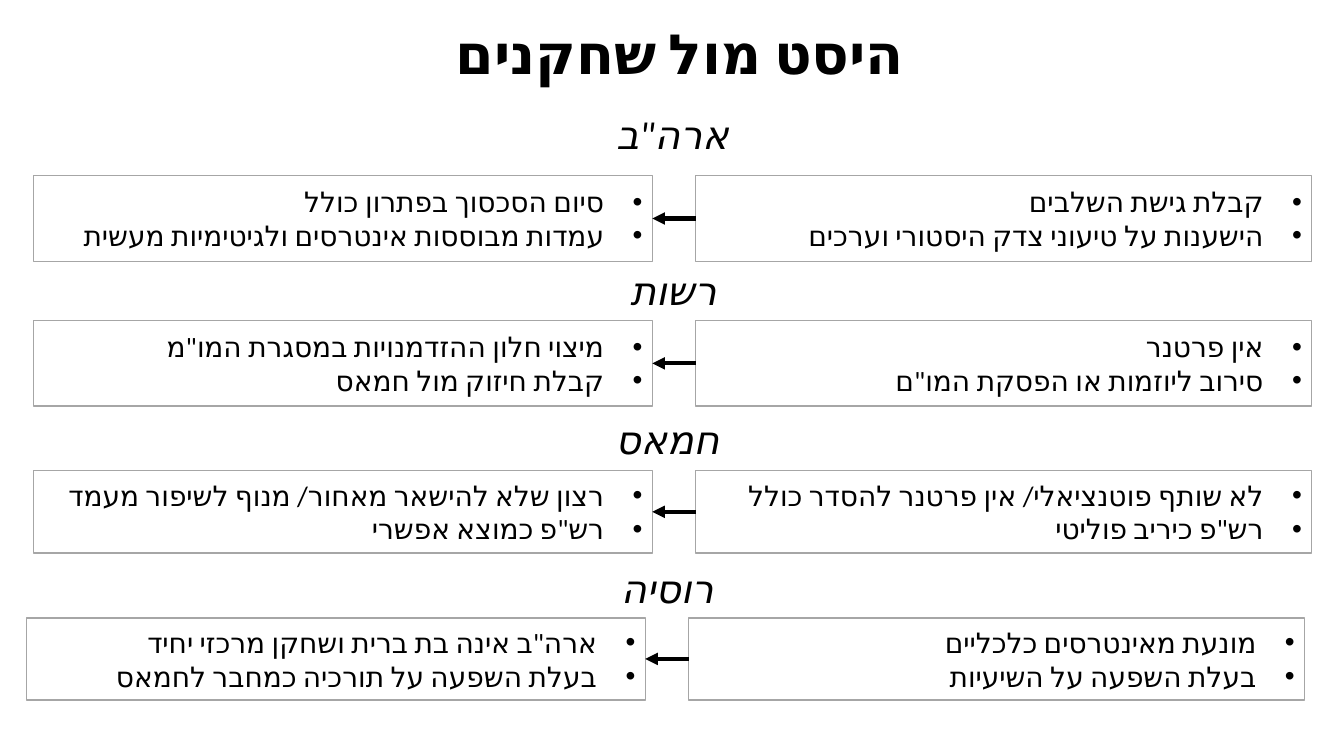
from dataclasses import dataclass

from lxml import etree
from pptx import Presentation
from pptx.dml.color import RGBColor
from pptx.enum.lang import MSO_LANGUAGE_ID
from pptx.enum.shapes import MSO_CONNECTOR, MSO_SHAPE
from pptx.enum.text import MSO_ANCHOR, MSO_AUTO_SIZE, PP_ALIGN
from pptx.oxml.ns import qn
from pptx.util import Inches, Pt

RECTANGLE = MSO_SHAPE.RECTANGLE
STRAIGHT = MSO_CONNECTOR.STRAIGHT
MIDDLE = MSO_ANCHOR.MIDDLE
NO_AUTOFIT = MSO_AUTO_SIZE.NONE
CENTER, RIGHT = PP_ALIGN.CENTER, PP_ALIGN.RIGHT
HEBREW = MSO_LANGUAGE_ID.HEBREW
LEFT_SIDE, RIGHT_SIDE = 1, 3

SLIDE_WIDTH, SLIDE_HEIGHT = Inches(13.33), Inches(7.5)


@dataclass(frozen=True)
class Theme:
    font: str = "Calibri"
    ink: RGBColor = RGBColor(0, 0, 0)
    frame: RGBColor = RGBColor(0xA6, 0xA6, 0xA6)
    title_size: float = 39.6
    actor_size: float = 28
    point_size: float = 20
    frame_width: float = 1
    arrow_width: float = 3
    bullet_indent: float = 0.38


THEME = Theme()

# Shares of the slide, in percent: left and width, or top and height
TITLE_AREA = (6.98, 2.93, 86.27, 9.07)
BEFORE_COLUMN = (51.76, 45.84)
AFTER_COLUMN = (2.48, 46.06)
ACTOR_WIDTH, ACTOR_HEIGHT = 15.3, 6.13

TITLE = "היסט מול שחקנים "

# Each actor: heading left and top, row top and height, sideways shift, points
ACTORS = [
    dict(name='ארה"ב', heading=(42.39, 14.67), row=(23.2, 11.4), shift=0,
         before=["קבלת גישת השלבים ", "הישענות על טיעוני צדק היסטורי וערכים"],
         after=["סיום הסכסוך בפתרון כולל",
                "עמדות מבוססות אינטרסים ולגיטימיות מעשית"]),
    dict(name="רשות", heading=(42.46, 35.33), row=(42.4, 11.33), shift=0,
         before=["אין פרטנר", 'סירוב ליוזמות או הפסקת המו"ם'],
         after=['מיצוי חלון ההזדמנויות במסגרת המו"מ', "קבלת חיזוק מול חמאס"]),
    dict(name="חמאס", heading=(42.01, 54.93), row=(62.27, 10.87), shift=0,
         before=["לא שותף פוטנציאלי/ אין פרטנר להסדר כולל",
                 'רש"פ כיריב פוליטי'],
         after=["רצון שלא להישאר מאחור/ מנוף לשיפור מעמד",
                'רש"פ כמוצא אפשרי ']),
    dict(name="רוסיה", heading=(42.01, 74.67), row=(81.73, 10.87), shift=-0.53,
         before=["מונעת מאינטרסים כלכליים", "בעלת השפעה על השיעיות"],
         after=['ארה"ב אינה בת ברית ושחקן מרכזי יחיד',
                "בעלת השפעה על תורכיה כמחבר לחמאס"]),
]


def apply(target, values):
    for name, value in values.items():
        setattr(target, name, value)


def area(left, top, width, height):
    """Turn percent shares into slide lengths."""
    return (int(SLIDE_WIDTH * left / 100), int(SLIDE_HEIGHT * top / 100),
            int(SLIDE_WIDTH * width / 100), int(SLIDE_HEIGHT * height / 100))


def add_bullet(paragraph):
    properties = paragraph._p.get_or_add_pPr()
    indent = Inches(THEME.bullet_indent)
    properties.set("marL", str(indent))
    properties.set("indent", str(-indent))
    etree.SubElement(properties, qn("a:buFont")).set("typeface", "Arial")
    etree.SubElement(properties, qn("a:buChar")).set("char", "•")


def write_lines(frame, lines, size, alignment, bulleted=False, spacing=None,
                **emphasis):
    """Fill a frame with right-to-left paragraphs."""
    apply(frame, dict(word_wrap=True, auto_size=NO_AUTOFIT,
                      vertical_anchor=MIDDLE))
    for index, line in enumerate(lines):
        paragraph = frame.add_paragraph() if index else frame.paragraphs[0]
        apply(paragraph, dict(alignment=alignment, line_spacing=spacing))
        paragraph._p.get_or_add_pPr().set("rtl", "1")
        if bulleted:
            add_bullet(paragraph)
        run = paragraph.add_run()
        run.text = line
        apply(run.font, dict(name=THEME.font, size=Pt(size),
                             language_id=HEBREW, **emphasis))
        run.font.color.rgb = THEME.ink
        # Hebrew letters take the complex-script font
        etree.SubElement(run._r.get_or_add_rPr(), qn("a:cs")).set(
            "typeface", THEME.font)


def place_title(slide):
    title = slide.shapes.title
    apply(title, dict(zip(("left", "top", "width", "height"),
                          area(*TITLE_AREA))))
    write_lines(title.text_frame, [TITLE], THEME.title_size, CENTER,
                spacing=0.9, bold=True)


def add_actor_heading(slide, name, position):
    heading = slide.shapes.add_textbox(
        *area(*position, ACTOR_WIDTH, ACTOR_HEIGHT))
    write_lines(heading.text_frame, [name], THEME.actor_size, CENTER,
                italic=True)


def add_position_box(slide, column, row, shift, points):
    left, width = column
    top, height = row
    box = slide.shapes.add_shape(
        RECTANGLE, *area(left + shift, top, width, height))
    box.shadow.inherit = False
    box.fill.background()
    box.line.color.rgb = THEME.frame
    box.line.width = Pt(THEME.frame_width)
    write_lines(box.text_frame, points, THEME.point_size, RIGHT, bulleted=True)
    return box


def add_shift_arrow(slide, before, after):
    arrow = slide.shapes.add_connector(STRAIGHT, 0, 0, 0, 0)
    arrow.begin_connect(before, LEFT_SIDE)
    arrow.end_connect(after, RIGHT_SIDE)
    arrow.line.color.rgb = THEME.ink
    arrow.line.width = Pt(THEME.arrow_width)
    etree.SubElement(arrow.line._get_or_add_ln(), qn("a:tailEnd")).set(
        "type", "triangle")
    etree.SubElement(arrow._element.spPr, qn("a:effectLst"))


def main():
    deck = Presentation()
    apply(deck, dict(slide_width=SLIDE_WIDTH, slide_height=SLIDE_HEIGHT))
    slide = deck.slides.add_slide(deck.slide_layouts.get_by_name("Title Only"))
    place_title(slide)

    # One heading and one before-to-after row per actor
    for actor in ACTORS:
        add_actor_heading(slide, actor["name"], actor["heading"])
        before, after = [
            add_position_box(slide, column, actor["row"], actor["shift"],
                             actor[stage])
            for stage, column in (("before", BEFORE_COLUMN),
                                  ("after", AFTER_COLUMN))]
        add_shift_arrow(slide, before, after)

    deck.save("out.pptx")


if __name__ == "__main__":
    main()
